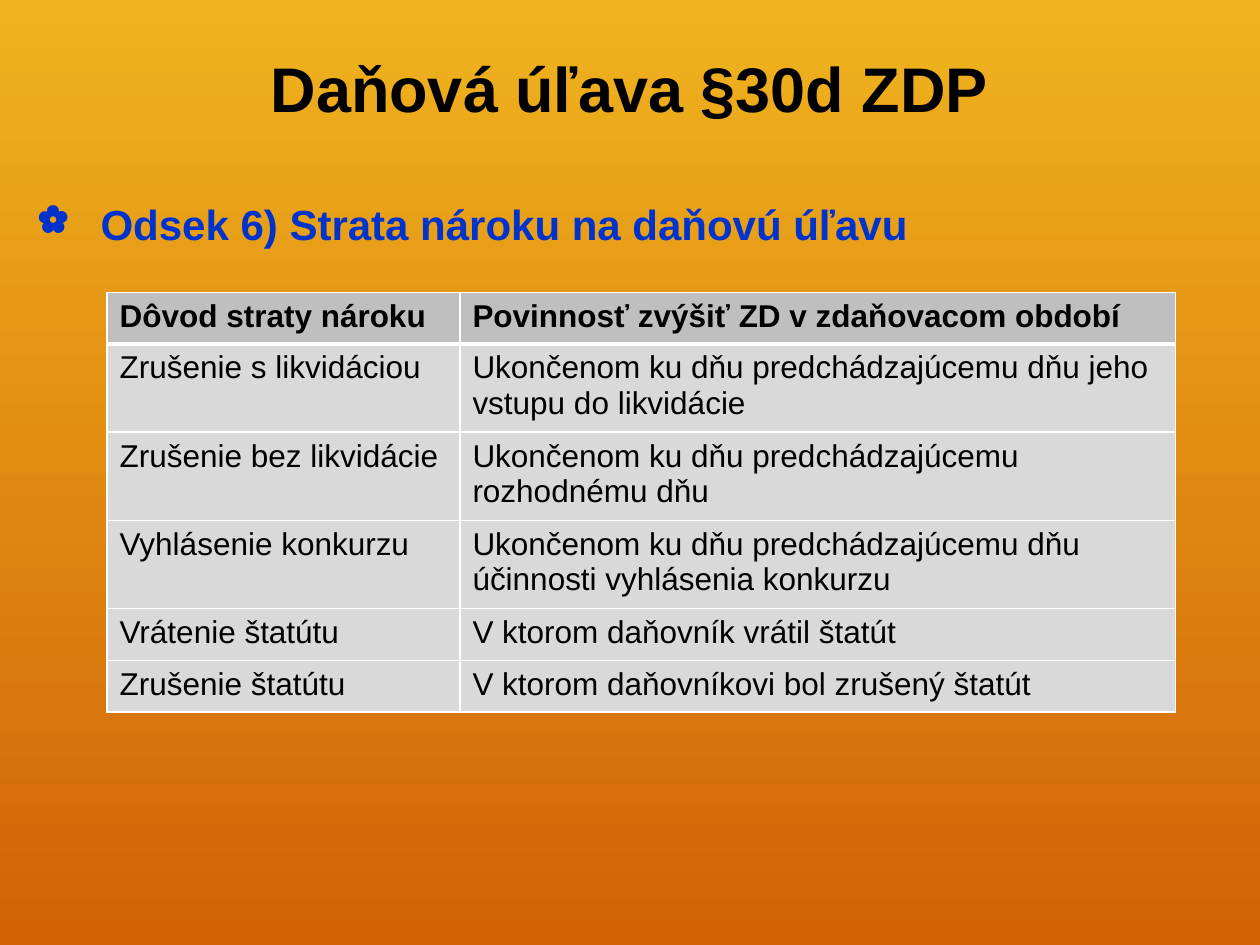
from lxml import etree
from pptx import Presentation
from pptx.dml.color import RGBColor
from pptx.enum import text
from pptx.oxml import ns
from pptx.util import Inches, Pt

HUES = {"top": "F0B31E", "base": "D16207", "ink": "000000", "blue": "0033CC",
        "head": "BFBFBF", "cell": "D9D9D9", "rule": "FFFFFF"}
ROWS = [
    ("Dôvod straty nároku", "Povinnosť zvýšiť ZD v zdaňovacom období"),
    ("Zrušenie s likvidáciou", "Ukončenom ku dňu predchádzajúcemu dňu jeho vstupu do likvidácie"),
    ("Zrušenie bez likvidácie", "Ukončenom ku dňu predchádzajúcemu rozhodnému dňu"),
    ("Vyhlásenie konkurzu", "Ukončenom ku dňu predchádzajúcemu dňu účinnosti vyhlásenia konkurzu"),
    ("Vrátenie štatútu", "V ktorom daňovník vrátil štatút"),
    ("Zrušenie štatútu", "V ktorom daňovníkovi bol zrušený štatút"),
]


def style(para, size, hue, bold):
    font = para.runs[0].font
    font.name, font.size, font.bold = "Arial", Pt(size), bold
    font.color.rgb = RGBColor.from_string(HUES[hue])


def edge(cell, sides):
    props = cell._tc.get_or_add_tcPr()
    for spot, (side, width) in enumerate(sides.items()):
        line = etree.Element(ns.qn("a:ln" + side), w=str(Pt(width)))
        fill = etree.SubElement(line, ns.qn("a:solidFill"))
        etree.SubElement(fill, ns.qn("a:srgbClr"), val=HUES["rule"])
        props.insert(spot, line)


deck = Presentation()
deck.slide_width, deck.slide_height = Inches(10), Inches(7.5)
slide = deck.slides.add_slide(deck.slide_layouts[6])

back = slide.background.fill
back.gradient()
back.gradient_angle = 270
for stop, hue in zip(back.gradient_stops, ("top", "base")):
    stop.color.rgb = RGBColor.from_string(HUES[hue])

title = slide.shapes.add_textbox(Inches(0.85), Inches(0.1), Inches(8.29), Inches(1.25)).text_frame
title.word_wrap = True
title.vertical_anchor = text.MSO_ANCHOR.MIDDLE
title.text = "Daňová úľava §30d ZDP"
para = title.paragraphs[0]
para.alignment = text.PP_ALIGN.CENTER
para.line_spacing = 0.95
style(para, 36, "ink", True)

body = slide.shapes.add_textbox(Inches(0.2), Inches(1.53), Inches(9.53), Inches(5.72)).text_frame
body.word_wrap = True
body.text = "Odsek 6) Strata nároku na daňovú úľavu"
para = body.paragraphs[0]
para.alignment = text.PP_ALIGN.JUSTIFY
props = para._p.get_or_add_pPr()
props.set("marL", str(Inches(0.5)))
props.set("indent", str(Inches(-0.5)))
etree.SubElement(props, ns.qn("a:buSzPct"), val="90000")
etree.SubElement(props, ns.qn("a:buChar"), char="✿")
style(para, 24, "blue", True)

grid = slide.shapes.add_table(len(ROWS), 2, Inches(0.85), Inches(2.32),
                              Inches(8.48), Inches(0.41 * len(ROWS))).table
for col, width in zip(grid.columns, (2.8, 5.68)):
    col.width = Inches(width)
for i, row in enumerate(ROWS):
    grid.rows[i].height = Inches(0.41)
    for j, words in enumerate(row):
        cell = grid.cell(i, j)
        cell.text = words
        style(cell.text_frame.paragraphs[0], 18, "ink", i == 0)
        cell.fill.solid()
        cell.fill.fore_color.rgb = RGBColor.from_string(HUES["cell" if i else "head"])
        edge(cell, {"L": 1, "R": 1, "T": 3 if i == 1 else 1, "B": 1 if i else 3})

deck.save("out.pptx")
